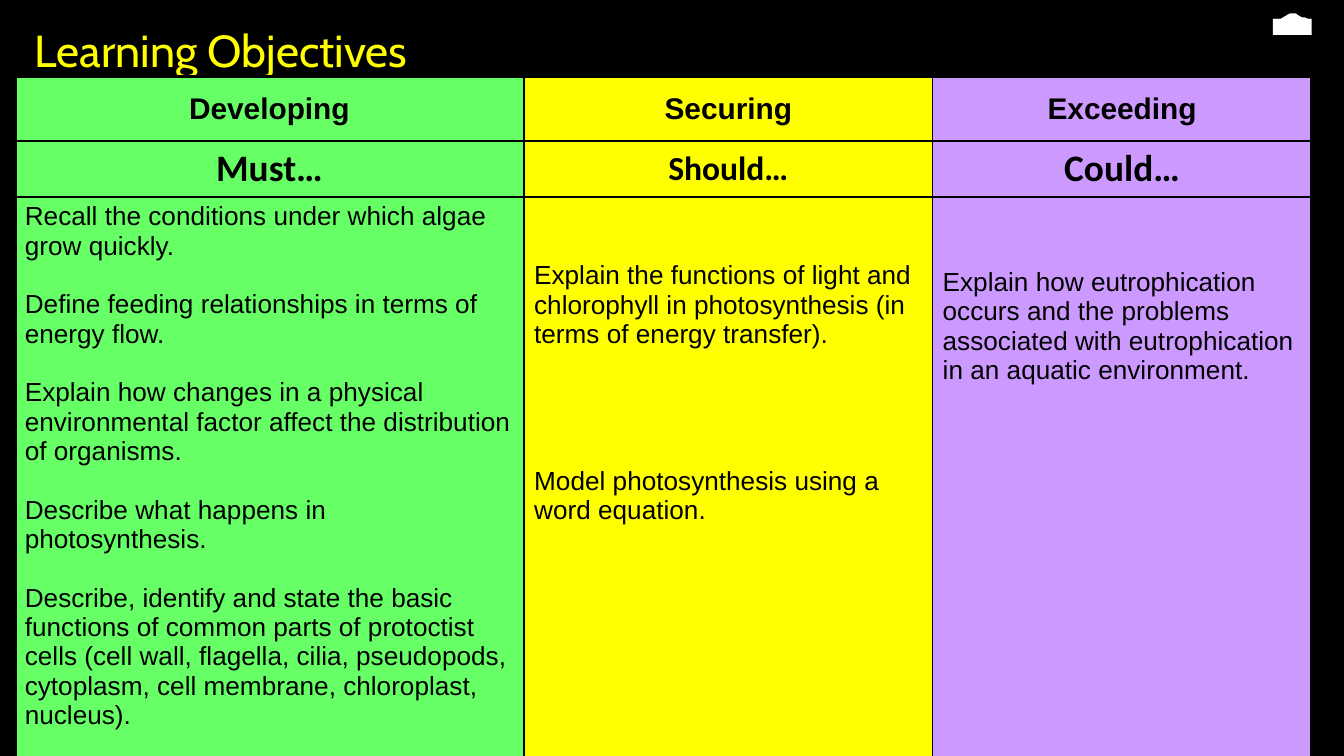
from dataclasses import dataclass

from pptx import Presentation
from pptx.dml.color import RGBColor
from pptx.enum.shapes import MSO_SHAPE
from pptx.enum.text import MSO_ANCHOR, PP_ALIGN
from pptx.oxml.ns import qn
from pptx.util import Inches, Pt
from lxml.etree import SubElement


@dataclass(frozen=True)
class Theme:
    black: str = "000000"
    white: str = "FFFFFF"
    yellow: str = "FFFF00"
    green: str = "66FF66"
    purple: str = "CC99FF"
    title_font: str = "Cabin"
    body_font: str = "Arial"
    level_font: str = "Calibri"
    title: int = 24
    heading: int = 16
    body: int = 14
    thin: float = 1
    thick: float = 2.25


T = Theme()
LINE = 15.7  # height of one body line in points
MARGIN_X = Inches(0.15) // 2
MARGIN_Y = MARGIN_X // 2

COL_WIDTHS = [3.79, 3.04, 2.82]
ROW_HEIGHTS = [0.48, 0.4, 4.28]

# heading, level word, level size, fill, drop of the text, paragraph gap, objectives
COLUMNS = [
    ("Developing", "Must…", 20, T.green, 0, LINE, [
        "Recall the conditions under which algae grow quickly.",
        "Define feeding relationships in terms of energy flow.",
        "Explain how changes in a physical environmental factor affect the "
        "distribution of organisms.",
        "Describe what happens in photosynthesis.",
        "Describe, identify and state the basic functions of common parts of "
        "protoctist cells (cell wall, flagella, cilia, pseudopods, cytoplasm, "
        "cell membrane, chloroplast, nucleus).",
    ]),
    ("Securing", "Should…", 18, T.yellow, 0.44, 4 * LINE, [
        "Explain the functions of light and chlorophyll in photosynthesis "
        "(in terms of energy transfer).",
        "Model photosynthesis using a word equation.",
    ]),
    ("Exceeding", "Could…", 20, T.purple, 0.49, 0, [
        "Explain how eutrophication occurs and the problems associated with "
        "eutrophication in an aquatic environment.",
    ]),
]


def rgb(color):
    return RGBColor.from_string(color)


def write(tf, text, size=T.body, font=T.body_font, color=T.black, bold=False,
          align=PP_ALIGN.LEFT, gap=0):
    """Fill a text frame with one paragraph per item, gap points apart."""
    items = [text] if isinstance(text, str) else text
    for i, item in enumerate(items):
        p = tf.add_paragraph() if i else tf.paragraphs[0]
        p.alignment = align
        p.space_before = Pt(gap if i else 0)
        r = p.add_run()
        r.text = item
        r.font.size, r.font.name, r.font.bold = Pt(size), font, bold
        r.font.color.rgb = rgb(color)


def set_borders(cell, **widths):
    tc_pr = cell._tc.get_or_add_tcPr()
    for side, width in widths.items():
        ln = SubElement(tc_pr, qn(f"a:ln{side}"), w=str(Pt(width)))
        SubElement(SubElement(ln, qn("a:solidFill")), qn("a:srgbClr"), val=T.black)


def format_cell(cell, color, drop=0, anchor=MSO_ANCHOR.MIDDLE):
    cell.fill.solid()
    cell.fill.fore_color.rgb = rgb(color)
    cell.margin_left = cell.margin_right = MARGIN_X
    cell.margin_top, cell.margin_bottom = MARGIN_Y + Inches(drop), MARGIN_Y
    cell.vertical_anchor = anchor


def add_title(s, text):
    sp = s.shapes.title
    sp.left, sp.top = Inches(0.16), Inches(0.12)
    sp.width, sp.height = Inches(7.18), Inches(0.91)
    tf = sp.text_frame
    tf.word_wrap = True
    tf.vertical_anchor = MSO_ANCHOR.TOP
    write(tf, text, size=T.title, font=T.title_font, color=T.yellow)


def add_objectives(s):
    rows, cols = len(ROW_HEIGHTS), len(COL_WIDTHS)
    table = s.shapes.add_table(rows, cols, Inches(0.11), Inches(0.57),
                               Inches(sum(COL_WIDTHS)), Inches(sum(ROW_HEIGHTS))).table
    table.first_row = table.horz_banding = False
    for row, height in zip(table.rows, ROW_HEIGHTS):
        row.height = Inches(height)
    for col, width in zip(table.columns, COL_WIDTHS):
        col.width = Inches(width)

    # Thick outer frame, thin inner lines
    for r in range(rows):
        for c in range(cols):
            outer = {"L": c == 0, "R": c == cols - 1, "T": r == 0, "B": r == rows - 1}
            set_borders(table.cell(r, c),
                        **{k: T.thick if v else T.thin for k, v in outer.items()})

    for c, (heading, level, size, color, drop, gap, objectives) in enumerate(COLUMNS):
        head, word, body = (table.cell(r, c) for r in range(rows))
        format_cell(head, color)
        write(head.text_frame, heading, size=T.heading, bold=True, align=PP_ALIGN.CENTER)
        format_cell(word, color)
        write(word.text_frame, level, size=size, font=T.level_font, bold=True,
              align=PP_ALIGN.CENTER)
        format_cell(body, color, drop=drop, anchor=MSO_ANCHOR.TOP)
        write(body.text_frame, objectives, gap=gap)


def paint_white(sp):
    sp.shadow.inherit = False
    sp.fill.solid()
    sp.fill.fore_color.rgb = rgb(T.white)
    sp.line.fill.background()


def add_corner_mark(s):
    group = s.shapes.add_group_shape()
    paint_white(group.shapes.add_shape(MSO_SHAPE.RECTANGLE, Inches(9.47), Inches(0.14),
                                       Inches(0.29), Inches(0.12)))
    dome = [(9.48, 0.14), (9.53, 0.14), (9.58, 0.11), (9.6, 0.1), (9.64, 0.1),
            (9.67, 0.12), (9.69, 0.13), (9.71, 0.13), (9.73, 0.14), (9.76, 0.14)]
    points = [(Inches(x), Inches(y)) for x, y in dome]
    fb = group.shapes.build_freeform(*points[0])
    fb.add_line_segments(points[1:], close=True)
    paint_white(fb.convert_to_shape())


def main():
    prs = Presentation()
    prs.slide_width = Inches(10)
    prs.slide_height = prs.slide_width * 9 // 16
    s = prs.slides.add_slide(prs.slide_layouts[5])
    s.background.fill.solid()
    s.background.fill.fore_color.rgb = rgb(T.black)

    add_title(s, "Learning Objectives")
    add_objectives(s)
    add_corner_mark(s)
    prs.save("out.pptx")


if __name__ == "__main__":
    main()
